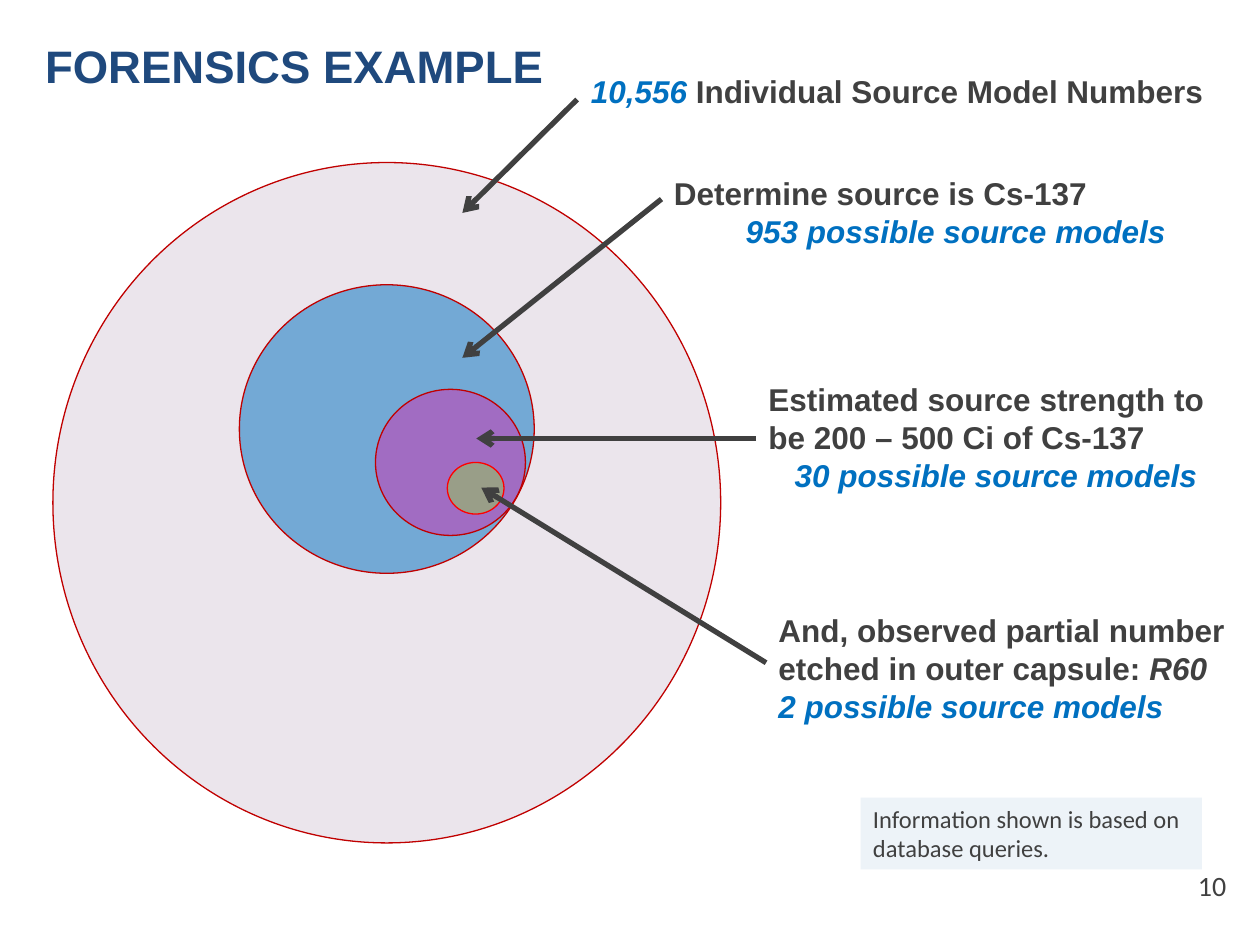
from lxml.etree import SubElement
from pptx import Presentation
from pptx.dml.color import RGBColor
from pptx.enum.shapes import MSO_CONNECTOR, MSO_SHAPE
from pptx.enum.text import MSO_ANCHOR, PP_ALIGN
from pptx.oxml.ns import qn
from pptx.util import Pt

COLORS = {
    "navy": "1F497D", "blue": "0070C0", "dark": "404040", "pale": "EBE5EC",
    "magenta": "CE32B0", "green": "92D050", "crimson": "C00000",
    "red": "FF0000", "note": "EDF3F8",
}
LEFT, CENTER, RIGHT = PP_ALIGN.LEFT, PP_ALIGN.CENTER, PP_ALIGN.RIGHT

# box, fill, opacity in percent, outline
CIRCLES = [
    ((30.24, 92.88, 381.6, 388.8), "pale", 100, "crimson"),
    ((136.8, 162.72, 168.48, 164.88), "blue", 51, "crimson"),
    ((214.56, 222.48, 85.68, 83.52), "magenta", 51, "crimson"),
    ((255.6, 264.24, 32.4, 29.52), "green", 50, "red"),
]

ARROWS = [
    ((329.76, 56.88), (264.24, 121.68)),
    ((378, 113.76), (264.24, 204.48)),
    ((432, 250.56), (272.16, 250.56)),
    ((437.76, 378.72), (275.04, 278.64)),
]

# box, paragraphs of (alignment, indent, runs of (text, colour, italic))
LABELS = [
    ((311.76, 37.44, 401.76, 28.8), [
        (CENTER, 0, [("10,556", "blue", True),
                     (" Individual Source Model Numbers", "dark", False)])]),
    ((378, 95.76, 336.24, 51.12), [
        (LEFT, 0, [("Determine source is Cs-137", "dark", False)]),
        (CENTER, 0, [("953 possible source models", "blue", True)])]),
    ((432, 213.84, 288, 72.72), [
        (LEFT, 0, [("Estimated source strength to be 200 – 500 Ci of Cs-137", "dark", False)]),
        (LEFT, 15, [("30 possible source models", "blue", True)])]),
    ((437.76, 345.6, 275.76, 72.72), [
        (LEFT, 0, [("And, observed partial number etched in outer capsule: ", "dark", False),
                   ("R60", "dark", True)]),
        (LEFT, 0, [("2 possible source models", "blue", True)])]),
]
TITLE = ((18.72, 18, 333.36, 38.88),
         [(LEFT, 0, [("FORENSICS EXAMPLE", "navy", False)])])
NOTE = ((491.76, 455.76, 195.12, 41.04),
        [(LEFT, 0, [("Information shown is based on database queries.", "dark", False)])])
NUMBER = ((666, 491.76, 41.76, 28.8), [(RIGHT, 0, [("10", "dark", False)])])


def rgb(name):
    return RGBColor.from_string(COLORS[name])


def add_circle(s, box, fill, opacity, outline):
    sp = s.shapes.add_shape(MSO_SHAPE.OVAL, *map(Pt, box))
    sp.shadow.inherit = False
    sp.fill.solid()
    sp.fill.fore_color.rgb = rgb(fill)
    if opacity < 100:
        clr = sp.fill._xPr.find(qn("a:solidFill"))[0]
        SubElement(clr, qn("a:alpha")).set("val", str(opacity * 1000))
    sp.line.color.rgb = rgb(outline)
    sp.line.width = Pt(0.75)


def add_arrow(s, start, end):
    cx = s.shapes.add_connector(MSO_CONNECTOR.STRAIGHT, *map(Pt, start + end))
    cx.line.color.rgb = rgb("dark")
    cx.line.width = Pt(3)
    SubElement(cx.line._get_or_add_ln(), qn("a:tailEnd")).set("type", "arrow")
    SubElement(cx._element.spPr, qn("a:effectLst"))


def add_text(s, box, paragraphs, size=18, font="Arial", bold=True,
             anchor=MSO_ANCHOR.TOP, fill=None):
    sp = s.shapes.add_textbox(*map(Pt, box))
    if fill:
        sp.fill.solid()
        sp.fill.fore_color.rgb = rgb(fill)
    tf = sp.text_frame
    tf.word_wrap = True
    tf.vertical_anchor = anchor
    for i, (align, indent, runs) in enumerate(paragraphs):
        p = tf.add_paragraph() if i else tf.paragraphs[0]
        p.alignment = align
        if indent:
            p._p.get_or_add_pPr().set("marL", str(Pt(indent)))
        for text, color, italic in runs:
            r = p.add_run()
            r.text = text
            r.font.size = Pt(size)
            r.font.name = font
            r.font.bold = bold
            r.font.italic = italic
            r.font.color.rgb = rgb(color)


def main():
    prs = Presentation()
    prs.slide_width, prs.slide_height = Pt(720), Pt(540)
    s = prs.slides.add_slide(prs.slide_layouts[6])
    for circle in CIRCLES:
        add_circle(s, *circle)
    add_text(s, *TITLE, size=26)
    for arrow in ARROWS:
        add_arrow(s, *arrow)
    for label in LABELS:
        add_text(s, *label)
    add_text(s, *NOTE, size=14, font="Calibri", bold=False,
             anchor=MSO_ANCHOR.MIDDLE, fill="note")
    add_text(s, *NUMBER, size=16, font="Calibri", bold=False,
             anchor=MSO_ANCHOR.MIDDLE)
    prs.save("out.pptx")


if __name__ == "__main__":
    main()
